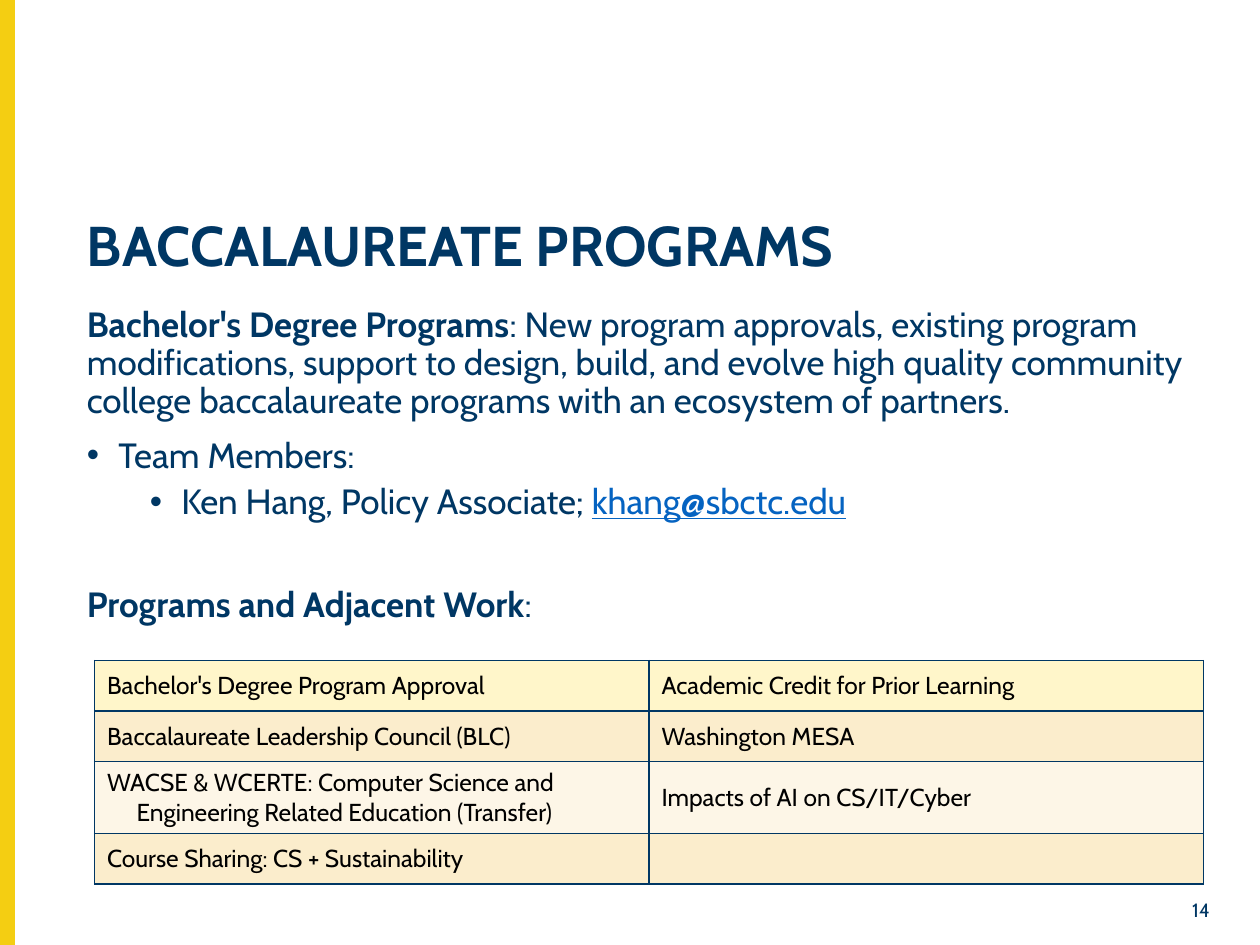
from lxml import etree
from pptx import Presentation
from pptx.dml.color import RGBColor
from pptx.enum.shapes import MSO_SHAPE
from pptx.enum.text import MSO_ANCHOR, MSO_AUTO_SIZE, PP_ALIGN
from pptx.oxml.ns import qn
from pptx.util import Pt

RECTANGLE = MSO_SHAPE.RECTANGLE
MIDDLE = MSO_ANCHOR.MIDDLE
NO_AUTOFIT = MSO_AUTO_SIZE.NONE
LEFT, RIGHT = PP_ALIGN.LEFT, PP_ALIGN.RIGHT

THEME = {
    "font": "Cabin",
    "navy": "003764",
    "gold": "F4CE12",
    "link": "0563C1",
    "black": "000000",
    "rows": ["FFF6CA", "FBEDCC", "FDF6E7", "FBEDCC"],
    "title_size": 32,
    "body_size": 20,
    "table_size": 14,
    "number_size": 11,
}


def style(span, size, color="navy", bold=False):
    span.font.name = THEME["font"]
    span.font.size = Pt(THEME[size])
    span.font.bold = bold
    span.font.color.rgb = RGBColor.from_string(THEME[color])


def indent(para, margin, hanging, bullet=None):
    """Set left margin and hanging indent in points, with an optional bullet."""
    properties = para._p.get_or_add_pPr()
    properties.set("marL", str(Pt(margin)))
    properties.set("indent", str(Pt(-hanging)))
    if bullet:
        etree.SubElement(properties, qn("a:buFont")).set("typeface", "Arial")
        etree.SubElement(properties, qn("a:buChar")).set("char", bullet)


deck = Presentation()
deck.slide_width, deck.slide_height = Pt(720), Pt(540)
page = deck.slides.add_slide(deck.slide_layouts[5])

# Gold side bar
bar = page.shapes.add_shape(RECTANGLE, 0, 0, Pt(8), Pt(540))
bar.shadow.inherit = False
bar.fill.solid()
bar.fill.fore_color.rgb = RGBColor.from_string(THEME["gold"])
bar.line.color.rgb = RGBColor.from_string(THEME["gold"])
bar.line.width = Pt(1)

# Title
title = page.shapes.title
title.left, title.top, title.width, title.height = Pt(42.5), Pt(122.4), Pt(656.6), Pt(39.6)
frame = title.text_frame
frame.text = "BACCALAUREATE PROGRAMS"
frame.auto_size = NO_AUTOFIT
frame.word_wrap = True
frame.vertical_anchor = MIDDLE
frame.paragraphs[0].alignment = LEFT
frame.paragraphs[0].line_spacing = 0.9
style(frame.paragraphs[0].runs[0], "title_size", bold=True)

# Body: level, space before, left margin, hanging indent, bullet, spans
BODY = [
    (0, 0, 0, 0, None, [
        ("Bachelor's Degree Programs", "navy", True),
        (": New program approvals, existing program modifications, support to design, "
         "build, and evolve high quality community college baccalaureate programs "
         "with an ecosystem of partners.", "navy", False),
    ]),
    (0, 10, 18, 18, "•", [("Team Members:", "navy", False)]),
    (1, 5, 54, 18, "•", [
        ("Ken Hang, Policy Associate; ", "navy", False),
        ("khang@sbctc.edu", "link", False),
    ]),
    (0, 37, 0, 0, None, [
        ("Programs and Adjacent Work", "navy", True),
        (":", "navy", False),
    ]),
]
body = page.shapes.add_textbox(Pt(42.5), Pt(172), Pt(656.6), Pt(338.4))
frame = body.text_frame
frame.word_wrap = True
for index, (level, before, margin, hanging, bullet, spans) in enumerate(BODY):
    para = frame.add_paragraph() if index else frame.paragraphs[0]
    para.level = level
    para.line_spacing = 0.9
    para.space_before = Pt(before)
    indent(para, margin, hanging, bullet)
    for text, color, bold in spans:
        span = para.add_run()
        span.text = text
        style(span, "body_size", color, bold)
        if color == "link":
            span.font.underline = True

# Slide number
number = page.shapes.add_textbox(Pt(661.7), Pt(510.5), Pt(36.7), Pt(18.7))
frame = number.text_frame
frame.word_wrap = True
frame.vertical_anchor = MIDDLE
frame.text = "14"
frame.paragraphs[0].alignment = RIGHT
style(frame.paragraphs[0].runs[0], "number_size")

# Table of programs
PROGRAMS = [
    ("Bachelor's Degree Program Approval", "Academic Credit for Prior Learning"),
    ("Baccalaureate Leadership Council (BLC)", "Washington MESA"),
    ("WACSE & WCERTE: Computer Science and Engineering Related Education (Transfer)",
     "Impacts of AI on CS/IT/Cyber"),
    ("Course Sharing: CS + Sustainability", ""),
]
ROW_HEIGHTS = [28.8, 28.8, 41.2, 28.8]
table = page.shapes.add_table(
    len(PROGRAMS), 2, Pt(54), Pt(377.5), Pt(633.6), Pt(sum(ROW_HEIGHTS))).table
table.first_row = False
table.horz_banding = False
for column in table.columns:
    column.width = Pt(316.8)
for row, height, fill, texts in zip(table.rows, ROW_HEIGHTS, THEME["rows"], PROGRAMS):
    row.height = Pt(height)
    for cell, text in zip(row.cells, texts):
        cell.vertical_anchor = MIDDLE
        cell.margin_top = cell.margin_bottom = 0
        for side in ("a:lnL", "a:lnR", "a:lnT", "a:lnB"):
            border = etree.SubElement(cell._tc.get_or_add_tcPr(), qn(side), w=str(Pt(1)))
            paint = etree.SubElement(border, qn("a:solidFill"))
            etree.SubElement(paint, qn("a:srgbClr"), val=THEME["navy"])
        cell.fill.solid()
        cell.fill.fore_color.rgb = RGBColor.from_string(fill)
        if text:
            cell.text = text
            para = cell.text_frame.paragraphs[0]
            indent(para, 16.8, 16.8)
            style(para.runs[0], "table_size", "black")

deck.save("out.pptx")
